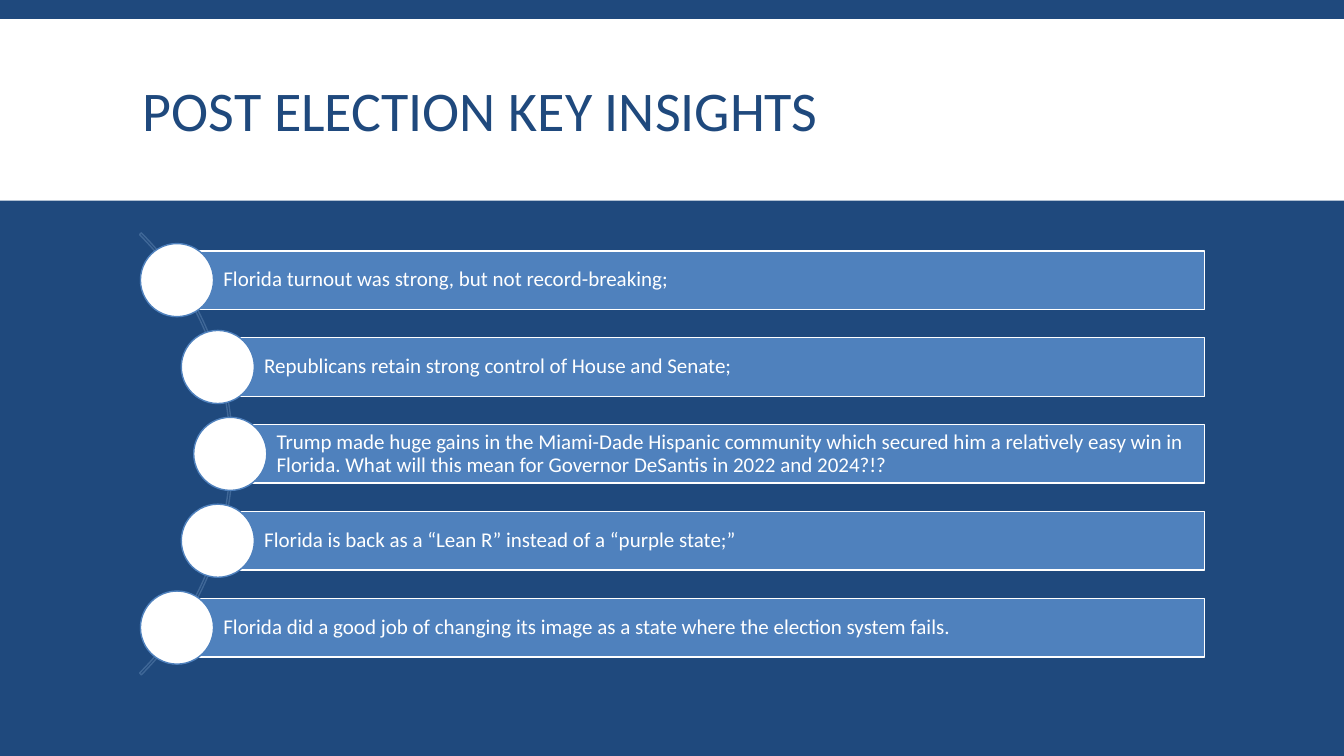
from math import sqrt

from pptx import Presentation
from pptx.dml.color import RGBColor
from pptx.enum.shapes import MSO_SHAPE
from pptx.enum.text import MSO_ANCHOR, PP_ALIGN
from pptx.util import Pt

RECTANGLE, OVAL, ARC = MSO_SHAPE.RECTANGLE, MSO_SHAPE.OVAL, MSO_SHAPE.BLOCK_ARC
MIDDLE, LEFT = MSO_ANCHOR.MIDDLE, PP_ALIGN.LEFT
COLORS = {"navy": "1F497D", "white": "FFFFFF", "blue": "4F81BD", "arc": "3F6797"}
FONT = "Calibri"
INSIGHTS = [
    "Florida turnout was strong, but not record-breaking;",
    "Republicans retain strong control of House and Senate;",
    "Trump made huge gains in the Miami-Dade Hispanic community which secured him "
    "a relatively easy win in Florida. What will this mean for Governor DeSantis "
    "in 2022 and 2024?!?",
    "Florida is back as a “Lean R” instead of a “purple state;”",
    "Florida did a good job of changing its image as a state where the election system fails.",
]


def color(name):
    """Return the named colour."""
    return RGBColor.from_string(COLORS[name])


def add_shape(slide, kind, box, fill=None, line=None):
    """Add a preset shape without shadow in the box (left, top, width, height)."""
    shape = slide.shapes.add_shape(kind, *map(Pt, box))
    shape.shadow.inherit = False
    if fill:
        shape.fill.solid()
        shape.fill.fore_color.rgb = color(fill)
    else:
        shape.fill.background()
    if line:
        shape.line.color.rgb = color(line)
        shape.line.width = Pt(1)
    else:
        shape.line.fill.background()
    return shape


def write(shape, text, size, color_name, spacing, insets):
    """Write one left-aligned, vertically centred paragraph in a shape."""
    frame = shape.text_frame
    frame.word_wrap = True
    frame.vertical_anchor = MIDDLE
    frame.margin_left, frame.margin_top, frame.margin_right, frame.margin_bottom = map(Pt, insets)
    paragraph = frame.paragraphs[0]
    paragraph.alignment = LEFT
    paragraph.line_spacing = spacing
    run = paragraph.add_run()
    run.text = text
    run.font.name = FONT
    run.font.size = Pt(size)
    run.font.color.rgb = color(color_name)


def add_header(slide, box, title):
    """Draw the white header band with its title."""
    left, top, width, height = box
    add_shape(slide, RECTANGLE, box, "white")
    title_box = (left + 95, top + 8.6, width - 189.6, height - 10.8)
    text_box = slide.shapes.add_textbox(*map(Pt, title_box))
    write(text_box, title, 40, "navy", 0.85, (7.2, 3.6, 7.2, 3.6))


def add_insights(slide, box, insights):
    """Place the insight bars in the box, their circles following an arc at the left."""
    left, top, width, height = box
    bar_height, circle_size, arc_radius, track_radius = 41.8, 52.2, 223.2, 221.4
    center_x, center_y = left - 157, top + height / 2
    arc = add_shape(slide, ARC, (center_x - arc_radius, center_y - arc_radius,
                                 2 * arc_radius, 2 * arc_radius), line="arc")
    for index, value in enumerate((189, 27, 0.004)):
        arc.adjustments[index] = value
    pitch = (height - circle_size) / (len(insights) - 1)
    for index, insight in enumerate(insights):
        y = top + circle_size / 2 + index * pitch
        x = center_x + sqrt(track_radius ** 2 - (y - center_y) ** 2)
        bar = add_shape(slide, RECTANGLE, (x, y - bar_height / 2, left + width - x, bar_height),
                        "blue", "white")
        write(bar, insight, 15, "white", 0.9, (33.1, 2.9, 2.9, 2.9))
        add_shape(slide, OVAL, (x - circle_size / 2, y - circle_size / 2,
                                circle_size, circle_size), "white", "blue")


def main():
    """Build and save the slide."""
    presentation = Presentation()
    presentation.slide_width, presentation.slide_height = Pt(960), Pt(540)
    slide = presentation.slides.add_slide(presentation.slide_layouts[6])
    slide.background.fill.solid()
    slide.background.fill.fore_color.rgb = color("navy")
    add_header(slide, (0, 13.7, 960, 129.6), "POST ELECTION KEY INSIGHTS")
    add_insights(slide, (100.1, 174, 760.3, 300.4), INSIGHTS)
    presentation.save("out.pptx")


if __name__ == "__main__":
    main()
